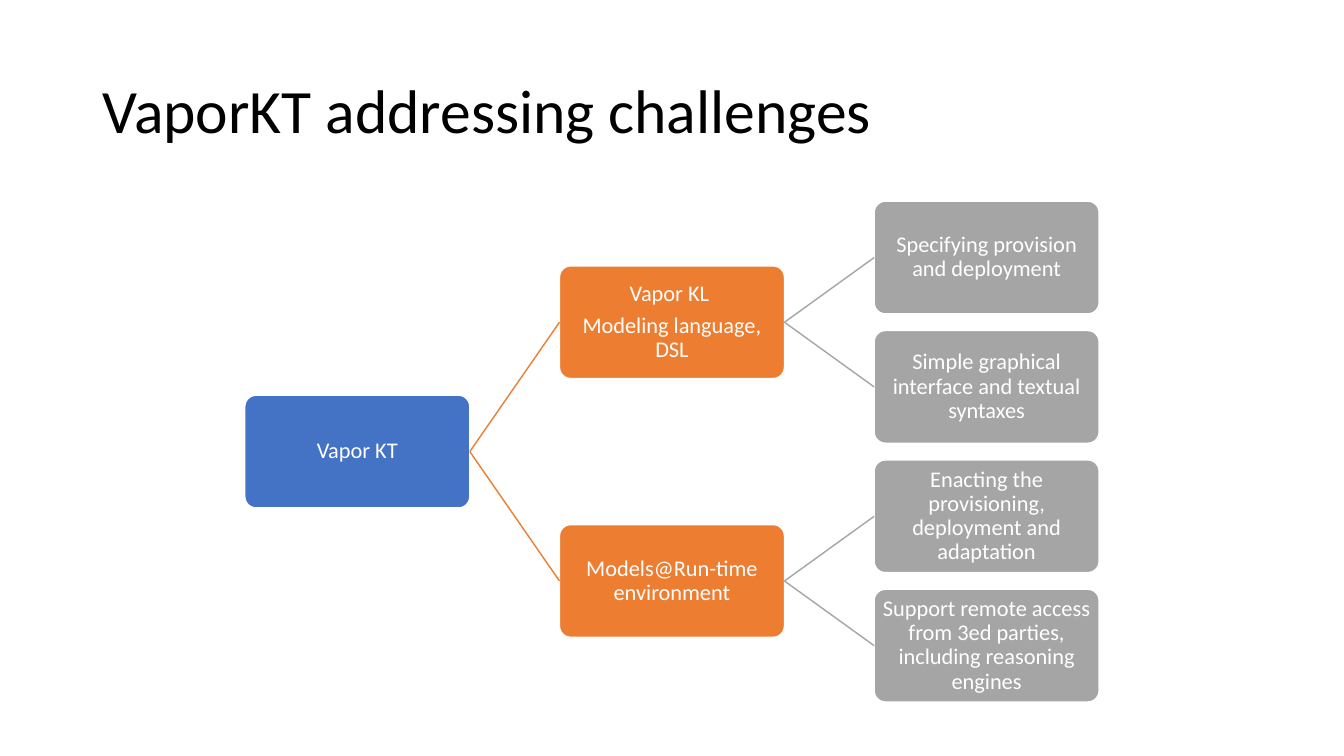
from dataclasses import dataclass, field

from lxml.etree import SubElement
from pptx import Presentation
from pptx.dml.color import RGBColor
from pptx.enum.shapes import MSO_CONNECTOR as Connector, MSO_SHAPE as Shape
from pptx.enum.text import MSO_ANCHOR as Anchor, PP_ALIGN as Align
from pptx.oxml.ns import qn
from pptx.shapes.autoshape import Shape as Box
from pptx.slide import Slide
from pptx.text.text import TextFrame
from pptx.util import Cm, Pt

COLORS = {
    "title": "000000",
    "white": "FFFFFF",
    "blue": "4472C4",
    "orange": "ED7D31",
    "gray": "A5A5A5",
}
LEVEL_COLORS = ["blue", "orange", "gray"]
FONT = "Calibri"

TREE_LEFT, FIRST_ROW_CENTER = 6.17, 6.49
COLUMN_STEP, ROW_STEP = 7.93, 3.26
BOX_WIDTH, BOX_HEIGHT = 5.67, 2.84
LEFT_SITE, RIGHT_SITE = 1, 3


@dataclass
class Node:
    lines: list[str]
    row: float
    children: list["Node"] = field(default_factory=list)


TREE = Node(["Vapor KT"], 1.5, [
    Node(["Vapor KL ", "Modeling language, DSL"], 0.5, [
        Node(["Specifying provision and deployment"], 0),
        Node(["Simple graphical interface and textual syntaxes"], 1),
    ]),
    Node(["Models@Run-time environment"], 2.5, [
        Node(["Enacting the provisioning, deployment and adaptation"], 2),
        Node(["Support remote access from 3ed parties, including reasoning engines"], 3),
    ]),
])


def color(name: str) -> RGBColor:
    return RGBColor.from_string(COLORS[name])


def write_lines(frame: TextFrame, lines: list[str], size: float,
                color_name: str, align: Align) -> None:
    frame.word_wrap = True
    frame.vertical_anchor = Anchor.MIDDLE
    for index, line in enumerate(lines):
        para = frame.add_paragraph() if index else frame.paragraphs[0]
        para.alignment = align
        para.line_spacing = 0.9
        para.space_before = Pt(0.35 * size if index else 0)
        span = para.add_run()
        span.text = line
        span.font.name = FONT
        span.font.size = Pt(size)
        span.font.color.rgb = color(color_name)


def add_title(page: Slide, text: str) -> None:
    title = page.shapes.title
    title.left, title.top = Cm(2.33), Cm(1.01)
    title.width, title.height = Cm(29.21), Cm(3.68)
    write_lines(title.text_frame, [text], 44, "title", Align.LEFT)


def add_box(page: Slide, node: Node, level: int) -> Box:
    center = FIRST_ROW_CENTER + node.row * ROW_STEP
    box = page.shapes.add_shape(
        Shape.ROUNDED_RECTANGLE,
        Cm(TREE_LEFT + level * COLUMN_STEP), Cm(center - BOX_HEIGHT / 2),
        Cm(BOX_WIDTH), Cm(BOX_HEIGHT))
    box.adjustments[0] = 0.1
    box.shadow.inherit = False
    box.fill.solid()
    box.fill.fore_color.rgb = color(LEVEL_COLORS[level])
    box.line.color.rgb = color("white")
    box.line.width = Pt(1)
    frame = box.text_frame
    frame.margin_left = frame.margin_right = Cm(0.03)
    frame.margin_top = frame.margin_bottom = Cm(0.03)
    write_lines(frame, node.lines, 16, "white", Align.CENTER)
    return box


def connect(page: Slide, parent: Box, child: Box, color_name: str) -> None:
    link = page.shapes.add_connector(Connector.STRAIGHT, 0, 0, 0, 0)
    link.begin_connect(parent, RIGHT_SITE)
    link.end_connect(child, LEFT_SITE)
    link.line.color.rgb = color(color_name)
    link.line.width = Pt(1)
    SubElement(link._element.spPr, qn("a:effectLst"))


def add_branch(page: Slide, node: Node, level: int = 0) -> Box:
    """Draw a node with everything below it and return the node's box."""
    box = add_box(page, node, level)
    for child in node.children:
        child_box = add_branch(page, child, level + 1)
        connect(page, box, child_box, LEVEL_COLORS[level + 1])
    return box


def main() -> None:
    deck = Presentation()
    deck.slide_width, deck.slide_height = Cm(33.87), Cm(19.05)
    title_only = deck.slide_layouts.get_by_name("Title Only")
    page = deck.slides.add_slide(title_only)
    add_title(page, "VaporKT addressing challenges")
    add_branch(page, TREE)
    deck.save("out.pptx")


if __name__ == "__main__":
    main()
